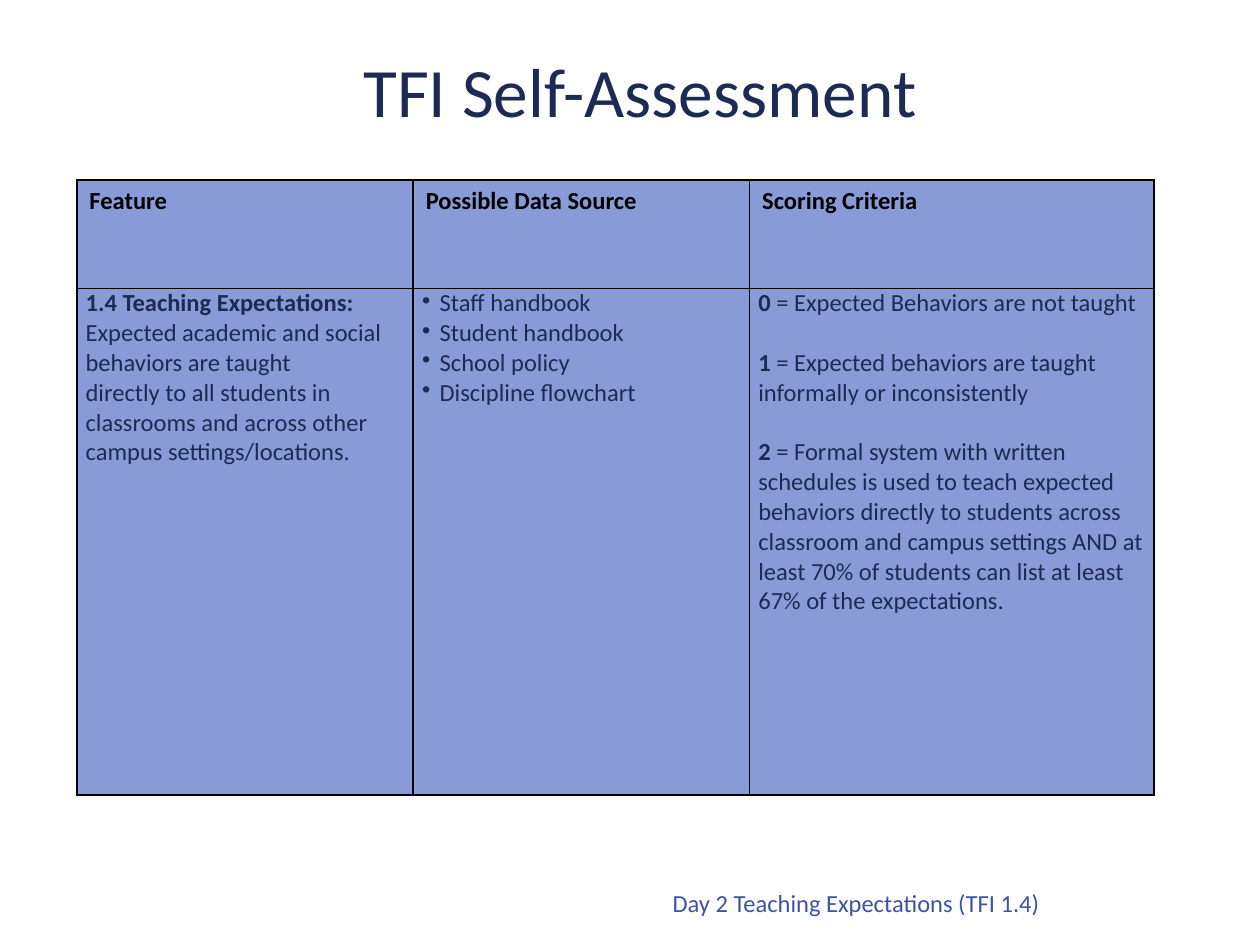
"""Build the TFI Self-Assessment slide with its scoring table."""
import lxml.etree
import pptx
import pptx.dml.color
import pptx.enum.text
import pptx.oxml.ns
import pptx.util

Inches = pptx.util.Inches
Pt = pptx.util.Pt
ALIGN = pptx.enum.text.PP_ALIGN
ANCHOR = pptx.enum.text.MSO_ANCHOR
qn = pptx.oxml.ns.qn

COLORS = {"navy": "1D2A53", "blue": "3A53A5", "cell": "899BD6", "black": "000000"}


def style(paragraph, size, color, bold=None):
    paragraph.font.name = "Calibri"
    paragraph.font.size = Pt(size)
    paragraph.font.bold = bold
    paragraph.font.color.rgb = pptx.dml.color.RGBColor.from_string(COLORS[color])


def add_label(slide, text, box, size, color, align, anchor):
    frame = slide.shapes.add_textbox(*map(Inches, box)).text_frame
    frame.word_wrap = True
    frame.vertical_anchor = anchor
    paragraph = frame.paragraphs[0]
    paragraph.text = text
    paragraph.alignment = align
    style(paragraph, size, color)


deck = pptx.Presentation()
deck.slide_width, deck.slide_height = Inches(10), Inches(7.5)
slide = deck.slides.add_slide(deck.slide_layouts[6])

add_label(slide, "Day 2 Teaching Expectations (TFI 1.4)", (3.63, 6.69, 4.72, 0.64),
          14, "blue", ALIGN.RIGHT, ANCHOR.BOTTOM)

headings = ["Feature", "Possible Data Source", "Scoring Criteria"]
feature = [
    ("1.4 Teaching Expectations:", ""),
    ("", "Expected academic and social behaviors are taught"),
    ("", "directly to all students in classrooms and across other"),
    ("", "campus settings/locations."),
]
sources = [("", source) for source in
           ["Staff handbook", "Student handbook", "School policy", "Discipline flowchart"]]
criteria = [
    ("0", " = Expected Behaviors are not taught"),
    ("1", " = Expected behaviors are taught informally or inconsistently"),
    ("2", " = Formal system with written schedules is used to teach expected behaviors "
          "directly to students across classroom and campus settings AND at least 70% of "
          "students can list at least 67% of the expectations."),
]

assessment = slide.shapes.add_table(2, 3, Inches(0.61), Inches(1.43), Inches(8.55), Inches(4.88)).table
assessment.first_row = False
assessment.horz_banding = False
for column, width in zip(assessment.columns, [2.67, 2.67, 3.21]):
    column.width = Inches(width)
for row, height in zip(assessment.rows, [0.86, 4.02]):
    row.height = Inches(height)

for cell in assessment.iter_cells():
    properties = cell._tc.get_or_add_tcPr()
    for side in ["lnL", "lnR", "lnT", "lnB"]:
        border = lxml.etree.SubElement(properties, qn(f"a:{side}"), w=str(Pt(1)))
        line_fill = lxml.etree.SubElement(border, qn("a:solidFill"))
        lxml.etree.SubElement(line_fill, qn("a:srgbClr"), val=COLORS["black"])
    cell.fill.solid()
    cell.fill.fore_color.rgb = pptx.dml.color.RGBColor.from_string(COLORS["cell"])

for col, heading in enumerate(headings):
    paragraph = assessment.cell(0, col).text_frame.paragraphs[0]
    paragraph.text = heading
    style(paragraph, 14, "black", True)

for col, entries in enumerate([feature, sources, criteria]):
    cell = assessment.cell(1, col)
    cell.margin_left = cell.margin_right = Inches(0.07)
    cell.margin_top = cell.margin_bottom = 0
    for index, (lead, body) in enumerate(entries):
        frame = cell.text_frame
        paragraph = frame.add_paragraph() if index else frame.paragraphs[0]
        for text, bold in [(lead, True), (body, False)]:
            if text:
                run = paragraph.add_run()
                run.text = text
                run.font.bold = bold
        if entries is criteria and index:
            paragraph.space_before = Pt(17)
        if entries is sources:
            bullet = paragraph._p.get_or_add_pPr()
            bullet.set("marL", str(Inches(0.14)))
            bullet.set("indent", str(Inches(-0.14)))
            lxml.etree.SubElement(bullet, qn("a:buChar"), char="•")
        style(paragraph, 14, "navy")

add_label(slide, "TFI Self-Assessment", (1, 0.32, 8.16, 0.79),
          39.6, "navy", ALIGN.CENTER, ANCHOR.MIDDLE)

deck.save("out.pptx")
